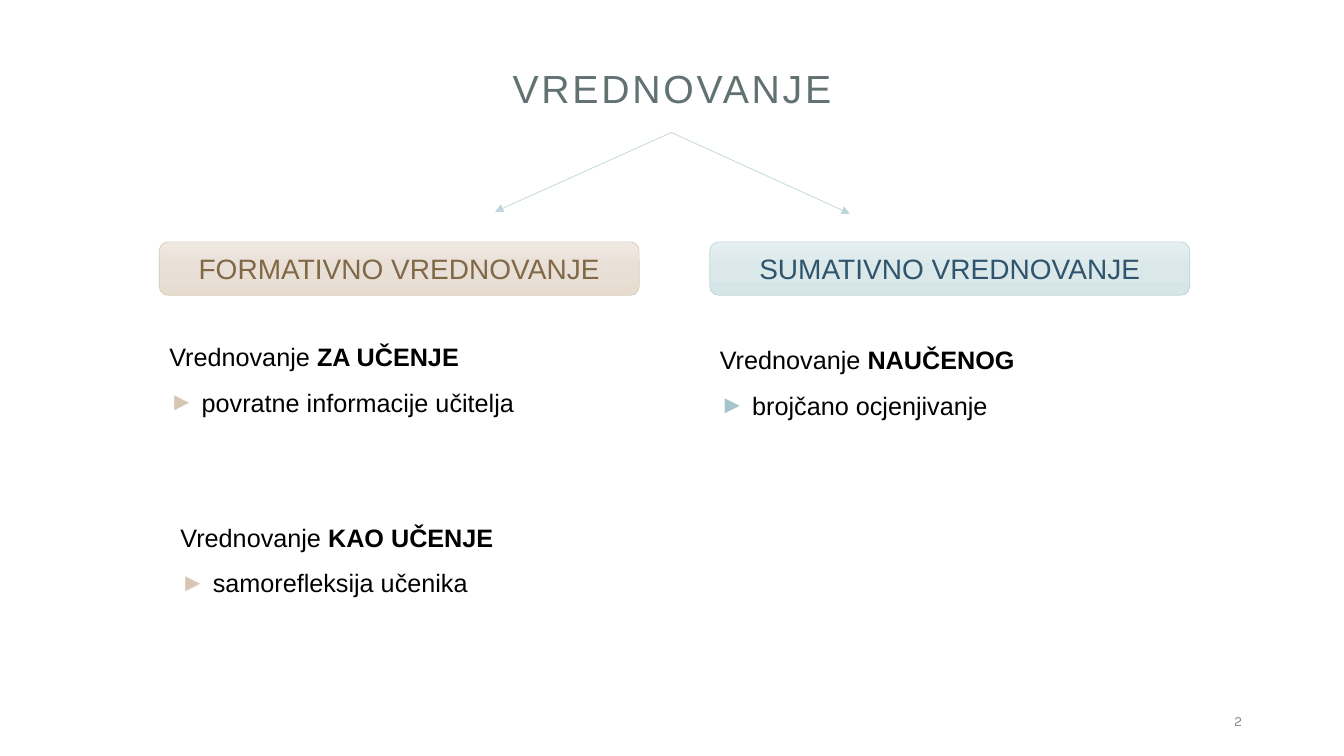
from copy import deepcopy
from dataclasses import dataclass

from lxml import etree
from pptx import Presentation
from pptx.dml.color import RGBColor
from pptx.enum.shapes import MSO_CONNECTOR, MSO_SHAPE
from pptx.enum.text import MSO_ANCHOR, MSO_AUTO_SIZE, PP_ALIGN
from pptx.oxml.ns import qn
from pptx.util import Inches, Pt

STRAIGHT = MSO_CONNECTOR.STRAIGHT
ROUNDED = MSO_SHAPE.ROUNDED_RECTANGLE
TOP, MIDDLE = MSO_ANCHOR.TOP, MSO_ANCHOR.MIDDLE
LEFT, CENTER, RIGHT = PP_ALIGN.LEFT, PP_ALIGN.CENTER, PP_ALIGN.RIGHT
NO_AUTOFIT = MSO_AUTO_SIZE.NONE


@dataclass(frozen=True)
class Theme:
    font: str = "Arial"
    number_font: str = "Karla"
    title: str = "627272"
    number: str = "8C8C8C"
    text: str = "000000"
    arrow: str = "BED6DA"
    sand_bullet: str = "D7C6B1"
    teal_bullet: str = "A4C6CB"
    title_size: int = 28
    header_size: int = 20
    body_size: int = 18
    number_size: int = 10
    line_width: float = 0.5


@dataclass(frozen=True)
class Header:
    text: str
    left: float
    gradient: tuple[str, str, str]
    border: str
    color: str


@dataclass(frozen=True)
class Topic:
    box: tuple[float, float, float, float]
    kind: str
    point: str
    bullet: str


THEME = Theme()
COLUMNS = (1.58, 7.04)
HEADERS = (
    Header("FORMATIVNO VREDNOVANJE", COLUMNS[0],
           ("EFE9E1", "E8E0D6", "E6DDD0"), "D8CAB7", "816846"),
    Header("SUMATIVNO VREDNOVANJE", COLUMNS[1],
           ("E6EFF1", "DAE8EA", "D5E5E8"), "BED6DA", "2F546C"),
)
TOPICS = (
    Topic((COLUMNS[0], 3.19, 4.21, 0.95), "ZA UČENJE",
          "povratne informacije učitelja", THEME.sand_bullet),
    Topic((1.69, 4.98, 4.21, 0.95), "KAO UČENJE",
          "samorefleksija učenika", THEME.sand_bullet),
    Topic((COLUMNS[1], 3.22, 4.21, 0.95), "NAUČENOG",
          "brojčano ocjenjivanje", THEME.teal_bullet),
)
ARROWS = (((6.67, 1.31), (4.91, 2.1)), ((6.67, 1.32), (8.43, 2.12)))


def set_format(obj, formats: dict) -> None:
    for name, value in formats.items():
        setattr(obj, name, value)


def place(sp, left: float, top: float, width: float, height: float) -> None:
    set_format(sp, {"left": Inches(left), "top": Inches(top),
                    "width": Inches(width), "height": Inches(height)})


def set_frame(tf, anchor) -> None:
    set_format(tf, {"word_wrap": True, "auto_size": NO_AUTOFIT,
                    "vertical_anchor": anchor})


def add_run(p, text: str, size: int, color: str, bold: bool = False,
            font: str = THEME.font, spacing: float = 0) -> None:
    r = p.add_run()
    r.text = text
    set_format(r.font, {"name": font, "size": Pt(size), "bold": bold})
    r.font.color.rgb = RGBColor.from_string(color)
    if spacing:
        r.font._element.set("spc", str(int(spacing * 100)))


def set_bullet(p, color: str | None = None) -> None:
    """Give the paragraph a coloured arrow bullet, or none without a colour."""
    pPr = p._p.get_or_add_pPr()
    indent = Inches(0.32) if color else 0
    pPr.set("marL", str(indent))
    pPr.set("indent", str(-indent))
    if color:
        bu_clr = etree.SubElement(pPr, qn("a:buClr"))
        etree.SubElement(bu_clr, qn("a:srgbClr"), val=color)
        etree.SubElement(pPr, qn("a:buFont"), typeface=THEME.font)
        etree.SubElement(pPr, qn("a:buChar"), char="►")
    else:
        etree.SubElement(pPr, qn("a:buNone"))


def add_arrow(slide, start: tuple[float, float], end: tuple[float, float]) -> None:
    cx = slide.shapes.add_connector(STRAIGHT, *map(Inches, start + end))
    cx.line.color.rgb = RGBColor.from_string(THEME.arrow)
    cx.line.width = Pt(THEME.line_width)
    etree.SubElement(cx.line._get_or_add_ln(), qn("a:tailEnd"), type="triangle")
    etree.SubElement(cx._element.spPr, qn("a:effectLst"))


def add_header(slide, header: Header) -> None:
    sp = slide.shapes.add_shape(ROUNDED, 0, 0, 0, 0)
    place(sp, header.left, 2.4, 4.76, 0.53)
    sp.shadow.inherit = False
    sp.line.color.rgb = RGBColor.from_string(header.border)
    sp.line.width = Pt(THEME.line_width)
    # Three-stop gradient, top to bottom
    sp.fill.gradient()
    sp.fill.gradient_angle = 270
    stops = sp._element.spPr.find(".//" + qn("a:gsLst"))
    stops.insert(1, deepcopy(stops[0]))
    for i, (stop, color) in enumerate(zip(sp.fill.gradient_stops, header.gradient)):
        stop.position = i / 2
        stop.color.rgb = RGBColor.from_string(color)
    set_frame(sp.text_frame, MIDDLE)
    p = sp.text_frame.paragraphs[0]
    p.alignment = CENTER
    add_run(p, header.text, THEME.header_size, header.color)


def fill_topic(sp, topic: Topic) -> None:
    place(sp, *topic.box)
    tf = sp.text_frame
    set_frame(tf, TOP)
    lead, point = tf.paragraphs[0], tf.add_paragraph()
    for p in (lead, point):
        set_format(p, {"alignment": LEFT, "line_spacing": 1.5,
                       "space_before": Pt(0), "space_after": Pt(0)})
    set_bullet(lead)
    set_bullet(point, topic.bullet)
    add_run(lead, "Vrednovanje ", THEME.body_size, THEME.text)
    add_run(lead, topic.kind, THEME.body_size, THEME.text, bold=True)
    add_run(point, topic.point, THEME.body_size, THEME.text)


def main() -> None:
    prs = Presentation()
    prs.slide_width, prs.slide_height = Inches(13.33), Inches(7.5)
    slide = prs.slides.add_slide(prs.slide_layouts.get_by_name("Comparison"))
    title, *bodies = slide.placeholders

    # Title
    place(title, 4.1, 0.49, 5.13, 0.82)
    set_frame(title.text_frame, MIDDLE)
    p = title.text_frame.paragraphs[0]
    set_format(p, {"alignment": CENTER, "line_spacing": 0.9})
    add_run(p, "VREDNOVANJE", THEME.title_size, THEME.title, spacing=2)

    # Slide number
    sp = slide.shapes.add_textbox(0, 0, 0, 0)
    place(sp, 9.42, 6.95, 3, 0.4)
    set_frame(sp.text_frame, MIDDLE)
    p = sp.text_frame.paragraphs[0]
    p.alignment = RIGHT
    add_run(p, "2", THEME.number_size, THEME.number,
            font=THEME.number_font, spacing=1.5)

    # Branches and column headers
    for start, end in ARROWS:
        add_arrow(slide, start, end)
    for header in HEADERS:
        add_header(slide, header)

    # Topic lists, then the unused placeholder goes
    for sp, topic in zip(bodies, TOPICS):
        fill_topic(sp, topic)
    for sp in bodies[len(TOPICS):]:
        sp._element.getparent().remove(sp._element)

    prs.save("out.pptx")


if __name__ == "__main__":
    main()
